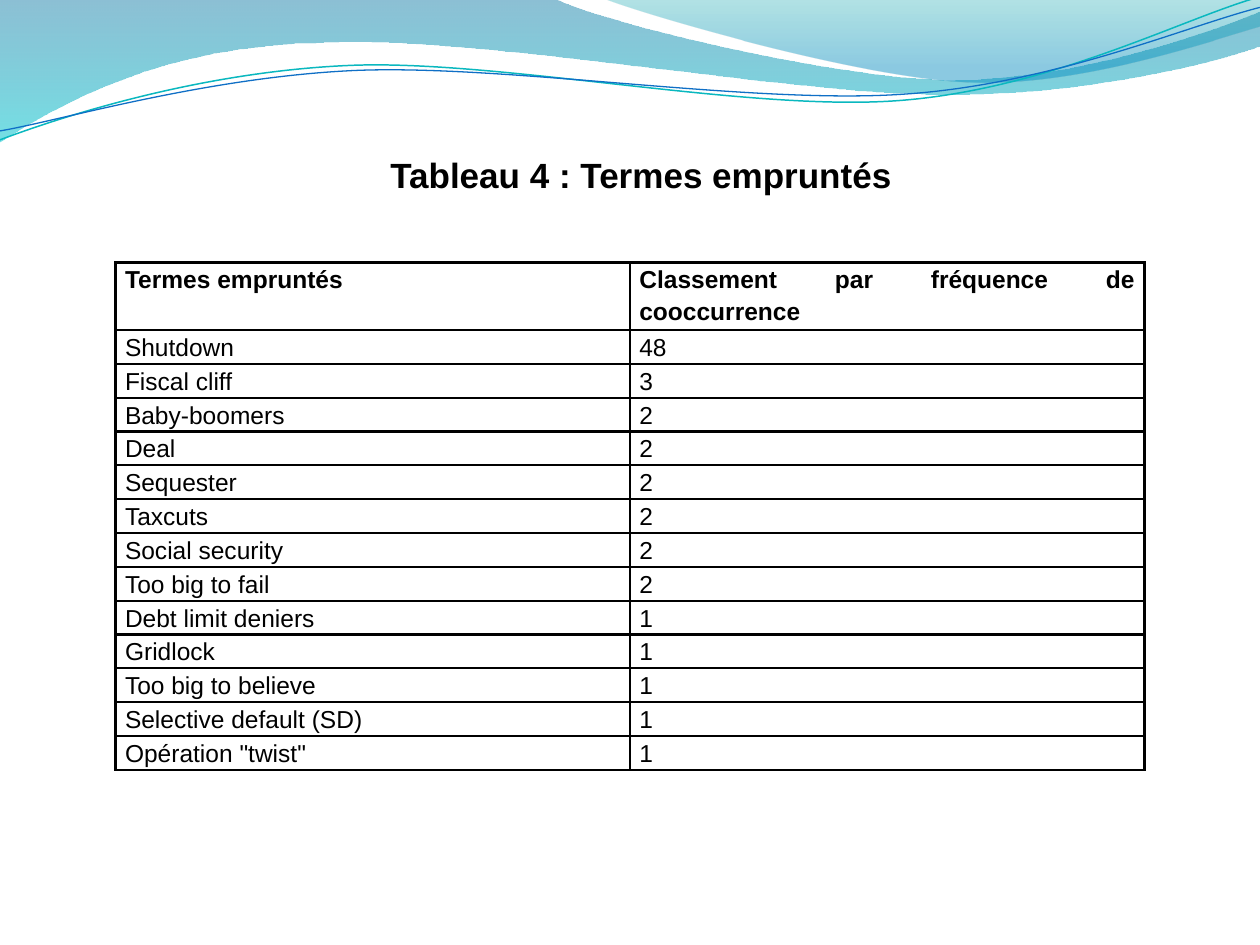
from dataclasses import dataclass

from lxml import etree
from pptx import Presentation
from pptx.dml.color import RGBColor
from pptx.enum.text import MSO_ANCHOR, MSO_AUTO_SIZE, PP_ALIGN
from pptx.oxml.ns import qn
from pptx.util import Cm, Pt

LEFT, JUSTIFY = PP_ALIGN.LEFT, PP_ALIGN.JUSTIFY
TOP = MSO_ANCHOR.TOP
GROW = MSO_AUTO_SIZE.SHAPE_TO_FIT_TEXT


@dataclass(frozen=True)
class Theme:
    font: str = "Arial"
    ink: str = "000000"
    title_size: float = 20
    cell_size: float = 14
    border: float = 1.5
    # Gradient stops: position, colour, opacity in percent
    back_wave: tuple = ((0, "0074A1", 45), (1, "00C6CF", 55))
    front_wave: tuple = ((0, "00A1A9", 30), (0.8, "008BBF", 45))
    teal_line: tuple = ("0AB8BF", 0.85)
    blue_line: tuple = ("0F6FC6", 0.75)


@dataclass(frozen=True)
class Box:
    """A region of the slide, in centimetres."""
    left: float
    top: float
    width: float
    height: float

    def emu(self):
        return Cm(self.left), Cm(self.top), Cm(self.width), Cm(self.height)


THEME = Theme()

# Outlines in cm from the banner corner: two numbers make a line, six a curve.
BACK_WAVE = [
    (0, -0.03), (11.18, -0.03), (12.09, 0.43, 16.87, 1.6, 19.25, 1.6),
    (21.67, 1.6, 24.33, 0.66, 25.4, 0.23), (25.43, 0.91),
    (24.97, 1.12, 22.1, 1.93, 18.95, 1.9), (15.8, 1.9, 9.7, 0.71, 6.53, 0.86),
    (3.28, 0.89, 1.17, 2.11, -0.03, 2.87),
]
FRONT_WAVE = [
    (12.17, -0.03), (12.93, 0.28, 17.32, 1.57, 19.53, 1.65),
    (21.74, 1.75, 24.41, 0.81, 25.4, 0.53), (25.4, 0),
]
TEAL_LINE = [
    (0, 2.82), (1.22, 2.36, 4.01, 1.45, 7.04, 1.32),
    (10.03, 1.19, 15.06, 2.26, 18.11, 2.03),
    (21.16, 1.8, 23.83, 0.38, 25.35, -0.05),
]
BLUE_LINE = [
    (0, 2.64), (1.19, 2.44, 4.17, 1.55, 7.19, 1.42),
    (10.24, 1.3, 15.16, 2.11, 18.21, 1.9), (21.23, 1.7, 23.9, 0.53, 25.4, 0.15),
]

TITLE = "Tableau 4 : Termes empruntés"
HEADINGS = ("Termes empruntés", "Classement par fréquence de cooccurrence")
TERMS = [
    ("Shutdown", 48), ("Fiscal cliff", 3), ("Baby-boomers", 2), ("Deal", 2),
    ("Sequester", 2), ("Taxcuts", 2), ("Social security", 2),
    ("Too big to fail", 2), ("Debt limit deniers", 1), ("Gridlock", 1),
    ("Too big to believe", 1), ("Selective default (SD)", 1),
    ('Opération "twist"', 1),
]


def write(frame, text, size, bold=False, align=LEFT, spacing=None, after=0):
    paragraph = frame.paragraphs[0]
    paragraph.alignment = align
    paragraph.line_spacing = spacing
    paragraph.space_after = Pt(after)
    run = paragraph.add_run()
    run.text = text
    run.font.name = THEME.font
    run.font.size = Pt(size)
    run.font.bold = bold
    run.font.color.rgb = RGBColor.from_string(THEME.ink)


def add_outline(slide, box, outline, close):
    """Build a freeform through the end points, then bend its curved segments."""
    start, *rest = [(Cm(box.left + segment[-2]), Cm(box.top + segment[-1]))
                    for segment in outline]
    builder = slide.shapes.build_freeform(*start)
    builder.add_line_segments(rest, close=close)
    shape = builder.convert_to_shape()
    shape.shadow.inherit = False
    lines = list(shape._element.iter(qn("a:lnTo")))
    for line, segment in zip(lines, outline[1:]):
        if len(segment) == 6:
            line.tag = qn("a:cubicBezTo")
            for index in (0, 2):
                x = Cm(box.left + segment[index]) - shape.left
                y = Cm(box.top + segment[index + 1]) - shape.top
                control = etree.Element(qn("a:pt"), x=str(x), y=str(y))
                line.insert(index // 2, control)
    return shape


def add_wave(slide, box, outline, stops):
    wave = add_outline(slide, box, outline, close=True)
    wave.line.fill.background()
    wave.fill.gradient()
    wave.fill.gradient_angle = 270
    for stop, (position, color, _) in zip(wave.fill.gradient_stops, stops):
        stop.position = position
        stop.color.rgb = RGBColor.from_string(color)
    colors = list(wave._element.iter(qn("a:srgbClr")))
    for element, (_, _, opacity) in zip(colors, stops):
        etree.SubElement(element, qn("a:alpha"), val=str(opacity * 1000))


def add_wave_line(slide, box, outline, style):
    color, width = style
    curve = add_outline(slide, box, outline, close=False)
    curve.fill.background()
    curve.line.color.rgb = RGBColor.from_string(color)
    curve.line.width = Pt(width)


def add_banner(slide, box):
    add_wave(slide, box, BACK_WAVE, THEME.back_wave)
    add_wave(slide, box, FRONT_WAVE, THEME.front_wave)
    add_wave_line(slide, box, TEAL_LINE, THEME.teal_line)
    add_wave_line(slide, box, BLUE_LINE, THEME.blue_line)


def add_title(slide, box):
    frame = slide.shapes.add_textbox(*box.emu()).text_frame
    frame.word_wrap = False
    frame.auto_size = GROW
    write(frame, TITLE, THEME.title_size, bold=True)


def add_borders(cell):
    properties = cell._tc.get_or_add_tcPr()
    for index, side in enumerate(("lnL", "lnR", "lnT", "lnB")):
        line = etree.Element(qn(f"a:{side}"), w=str(Pt(THEME.border)))
        fill = etree.SubElement(line, qn("a:solidFill"))
        etree.SubElement(fill, qn("a:srgbClr"), val=THEME.ink)
        properties.insert(index, line)


def add_terms_table(slide, box):
    rows = [HEADINGS, *TERMS]
    table = slide.shapes.add_table(len(rows), len(HEADINGS), *box.emu()).table
    table.first_row = table.horz_banding = False
    for r, values in enumerate(rows):
        for c, value in enumerate(values):
            cell = table.cell(r, c)
            cell.margin_left = cell.margin_right = Cm(0.19)
            cell.margin_top = cell.margin_bottom = 0
            cell.vertical_anchor = TOP
            cell.fill.background()
            add_borders(cell)
            write(cell.text_frame, str(value), THEME.cell_size, bold=r == 0,
                  align=JUSTIFY, spacing=1.15, after=10)


def main():
    deck = Presentation()
    deck.slide_width, deck.slide_height = Cm(25.4), Cm(19.05)
    slide = deck.slides.add_slide(deck.slide_layouts[6])
    add_banner(slide, Box(0, 0, 25.4, 2.87))
    add_title(slide, Box(7.62, 2.97, 10.7, 1.12))
    add_terms_table(slide, Box(2.33, 5.29, 20.74, 9.55))
    deck.save("out.pptx")


if __name__ == "__main__":
    main()
